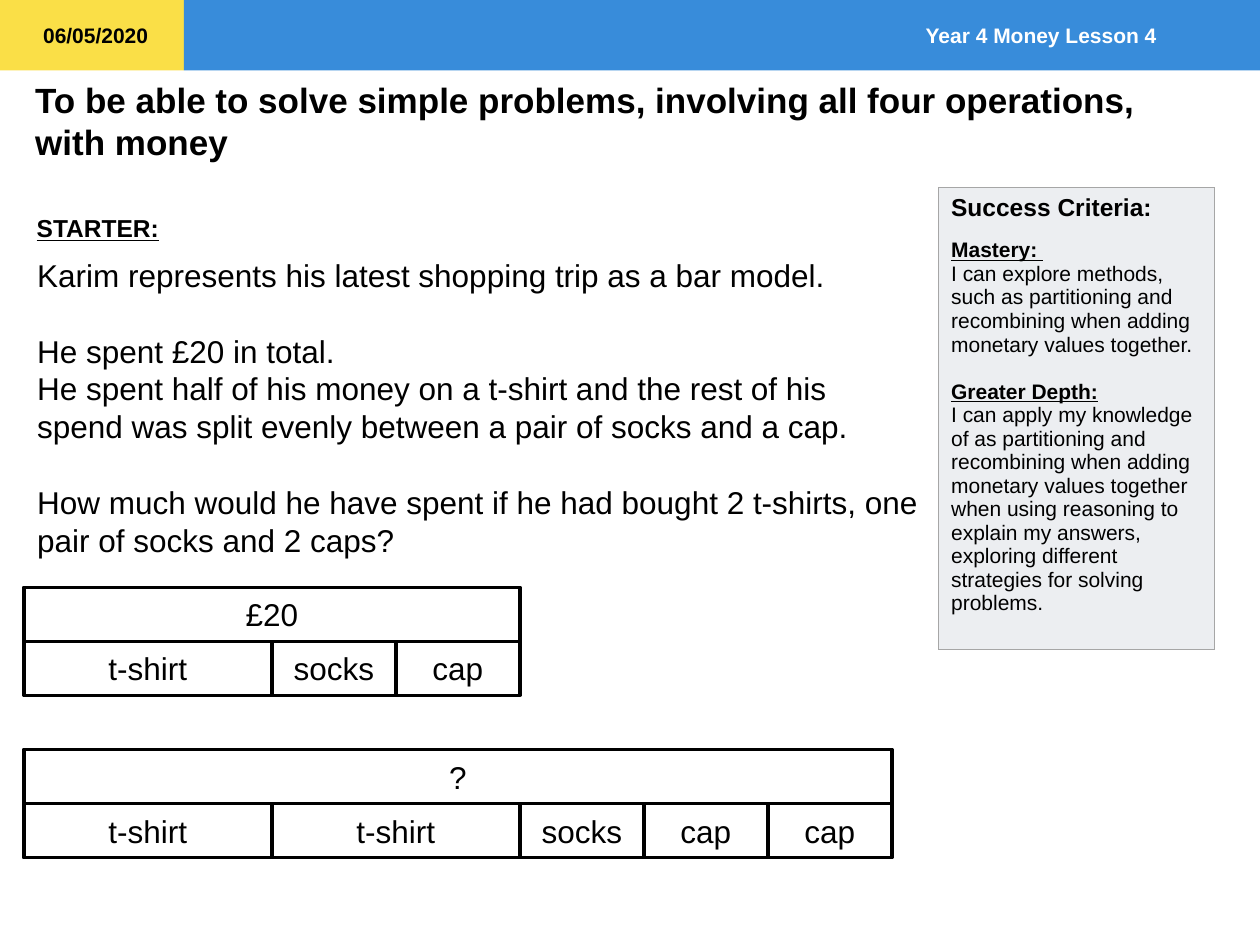
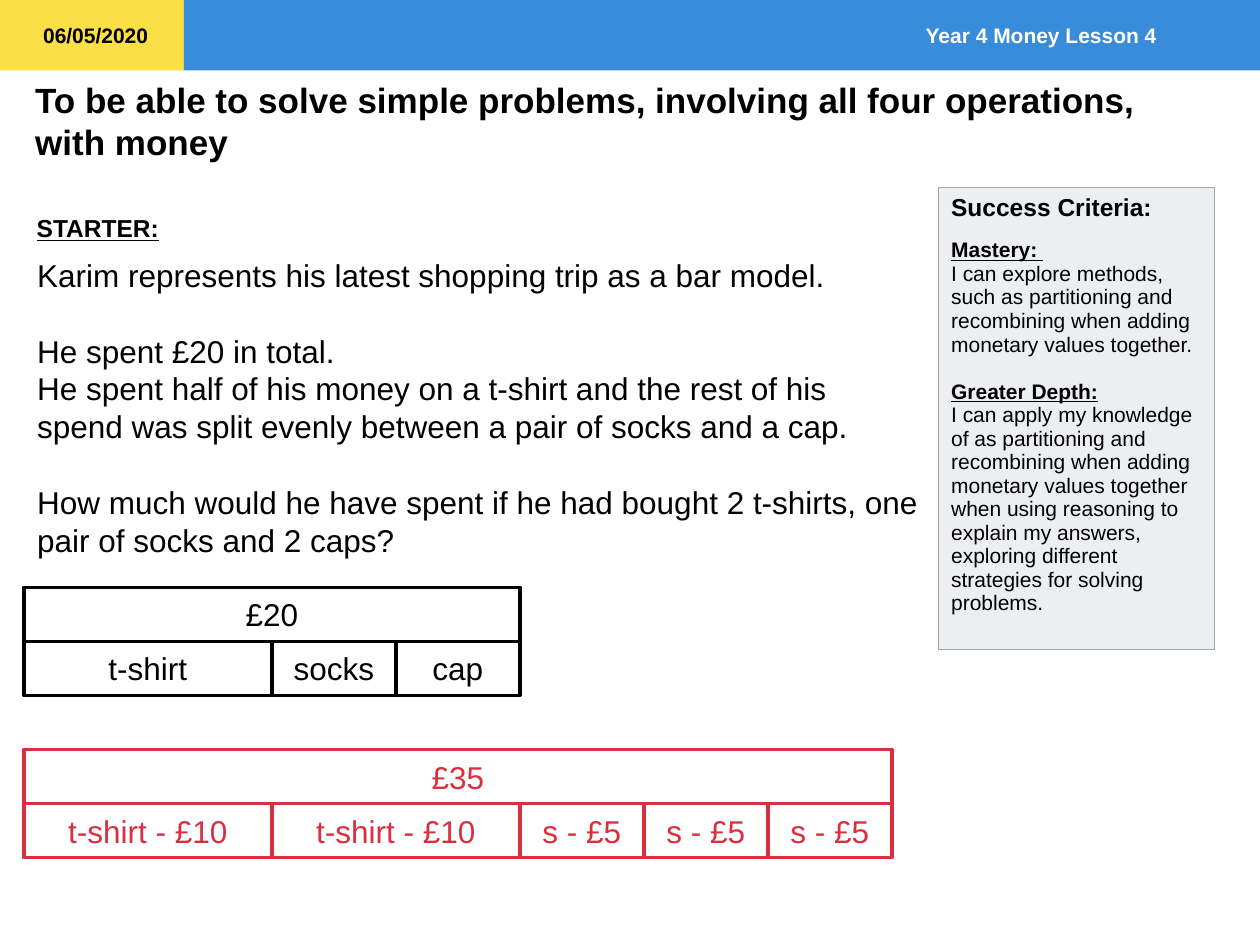
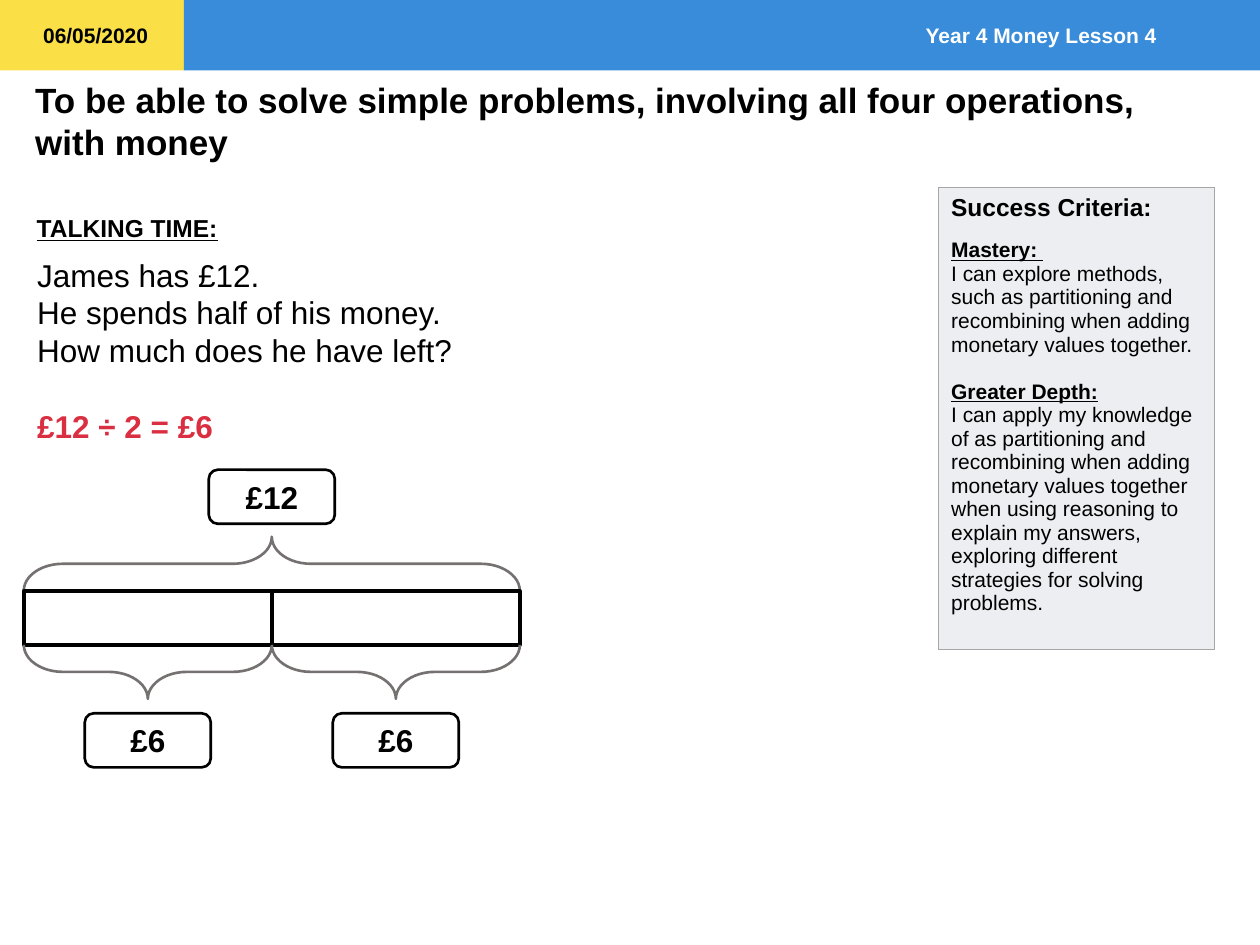
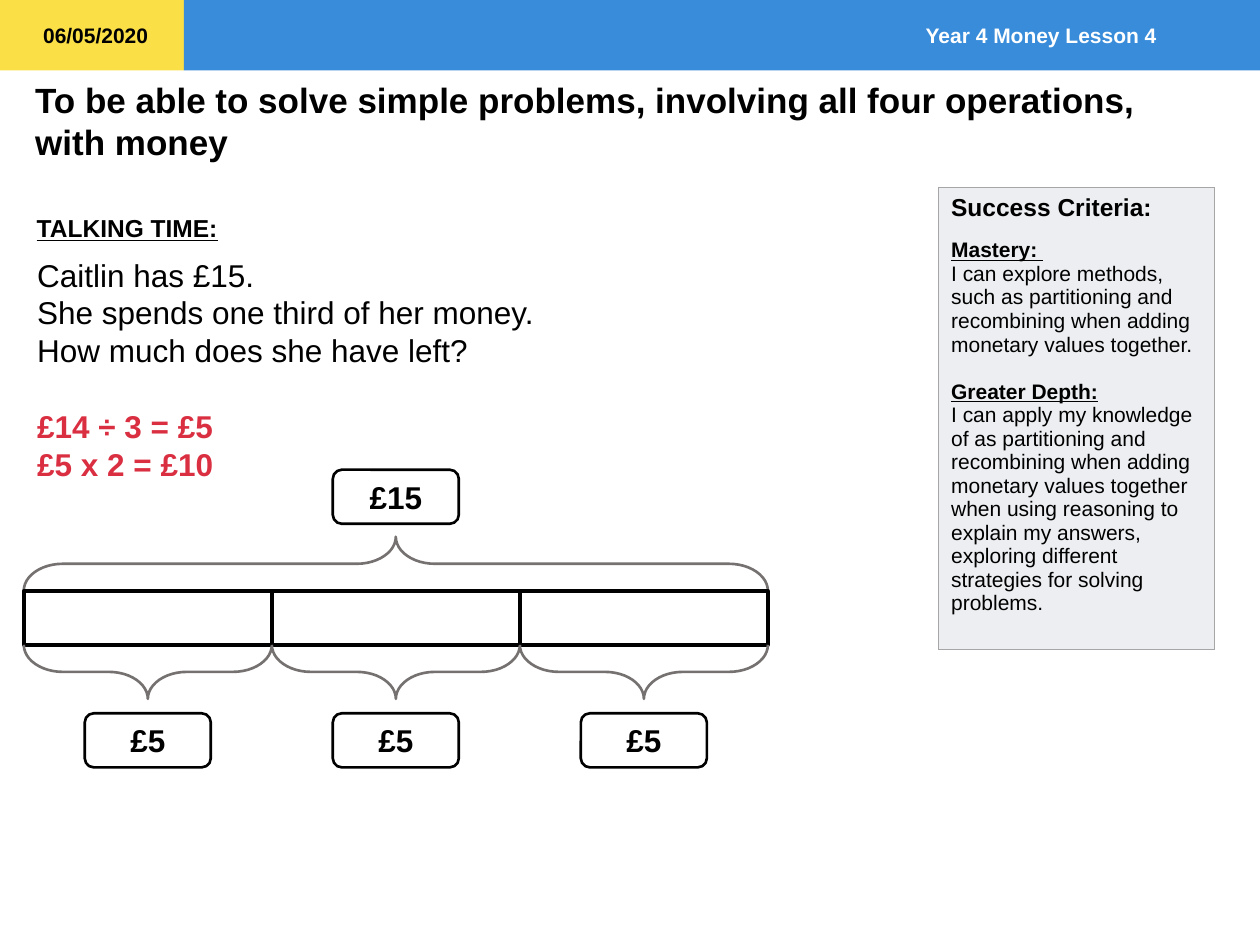
from dataclasses import dataclass

from lxml import etree
from pptx import Presentation
from pptx import util as u
from pptx.dml.color import RGBColor
from pptx.enum import shapes, text
from pptx.oxml import ns

COLORS = {
    "black": "000000",
    "white": "FFFFFF",
    "yellow": "FADF47",
    "blue": "388CDA",
    "red": "DA2E41",
    "brace": "767171",
    "panel": "ECEEF1",
    "panel_edge": "A6A6A6",
}
FONT = "Arial"
SLIDE_WIDTH, SLIDE_HEIGHT = 25.4, 19.05
BAND_HEIGHT, DATE_WIDTH = 1.42, 3.71
MODEL_LEFT, UNIT_WIDTH, BAR_HEIGHT = 0.48, 5, 1.09
SHARES_TOP, LABEL_WIDTH = 11.91, 2.54
WHOLE_LABEL_TOP, SHARE_LABEL_TOP = 9.47, 14.38
BLANK_LINE = 21.75


@dataclass(frozen=True)
class Box:
    left: float
    top: float
    width: float
    height: float

    def lengths(self) -> tuple:
        return tuple(u.Cm(value) for value in (self.left, self.top, self.width, self.height))


@dataclass(frozen=True)
class Line:
    text: str
    size: float = 18
    bold: bool = False
    underline: bool = False
    color: str = "black"
    before: float = 0


@dataclass(frozen=True)
class Bar:
    label: str
    units: float


@dataclass(frozen=True)
class BarModel:
    top: float
    total: str
    bars: tuple[Bar, ...]
    color: str = "black"


@dataclass(frozen=True)
class ShareModel:
    whole: str
    share: str
    count: int


@dataclass(frozen=True)
class Lesson:
    heading: str
    heading_width: float
    body_width: float
    body_height: float
    lines: tuple[Line, ...]
    models: tuple


CRITERIA = (
    Line("Success Criteria:", 14, bold=True),
    Line("Mastery: ", 12, bold=True, underline=True, before=10),
    Line("I can explore methods, such as partitioning and recombining when adding "
         "monetary values together.", 12),
    Line("Greater Depth:", 12, bold=True, underline=True, before=13.5),
    Line("I can apply my knowledge of as partitioning and recombining when adding "
         "monetary values together when using reasoning to explain my answers, "
         "exploring different strategies for solving problems.", 12),
)
SHOPPING = (
    Line("Karim represents his latest shopping trip as a bar model."),
    Line("He spent £20 in total.", before=BLANK_LINE),
    Line("He spent half of his money on a t-shirt and the rest of his spend was split "
         "evenly between a pair of socks and a cap."),
    Line("How much would he have spent if he had bought 2 t-shirts, one pair of socks "
         "and 2 caps?", before=BLANK_LINE),
)
SPENT = BarModel(11.84, "£20", (Bar("t-shirt", 1), Bar("socks", 0.5), Bar("cap", 0.5)))
QUESTION = BarModel(15.11, "?", (
    Bar("t-shirt", 1), Bar("t-shirt", 1), Bar("socks", 0.5), Bar("cap", 0.5), Bar("cap", 0.5),
))
ANSWER = BarModel(
    15.11, "£35", (Bar("t-shirt - £10", 1),) * 2 + (Bar("s - £5", 0.5),) * 3, "red"
)


def starter(second_model: BarModel) -> Lesson:
    return Lesson("STARTER:", 3, 18.31, 11.02, SHOPPING, (SPENT, second_model))


def talking_time(height: float, lines: tuple[Line, ...], model: ShareModel) -> Lesson:
    return Lesson("TALKING TIME:", 4.19, 24.89, height, lines, (model,))


LESSONS = (
    starter(QUESTION),
    starter(ANSWER),
    talking_time(4.11, (
        Line("James has £12."),
        Line("He spends half of his money.\vHow much does he have left?"),
        Line("£12 ÷ 2 = £6", bold=True, color="red", before=BLANK_LINE),
    ), ShareModel("£12", "£6", 2)),
    talking_time(4.88, (
        Line("Caitlin has £15."),
        Line("She spends one third of her money.\vHow much does she have left?"),
        Line("£14 ÷ 3 = £5", bold=True, color="red", before=BLANK_LINE),
        Line("£5 x 2 = £10", bold=True, color="red"),
    ), ShareModel("£15", "£5", 3)),
)


def rgb(name: str) -> RGBColor:
    return RGBColor.from_string(COLORS[name])


def add_text(frame, content: str, *, size: float = 18, bold: bool = False,
             underline: bool = False, color: str = "black", before: float = 0,
             align=text.PP_ALIGN.LEFT) -> None:
    paragraph = frame.add_paragraph() if frame.text else frame.paragraphs[0]
    paragraph.text = content
    paragraph.alignment = align
    paragraph.space_before = u.Pt(before)
    for run in paragraph.runs:
        run.font.name = FONT
        run.font.size = u.Pt(size)
        run.font.bold = bold
        run.font.underline = underline
        run.font.color.rgb = rgb(color)


def add_lines(frame, lines: tuple[Line, ...]) -> None:
    for line in lines:
        add_text(frame, line.text, size=line.size, bold=line.bold,
                 underline=line.underline, color=line.color, before=line.before)


def add_text_box(slide, box: Box, lines: tuple[Line, ...], wrap: bool = True) -> None:
    frame = slide.shapes.add_textbox(*box.lengths()).text_frame
    frame.word_wrap = wrap
    frame.auto_size = text.MSO_AUTO_SIZE.SHAPE_TO_FIT_TEXT
    add_lines(frame, lines)


def add_shape(slide, kind, box: Box, fill: str = "", line: str = "", weight: float = 2):
    shape = slide.shapes.add_shape(kind, *box.lengths())
    shape.shadow.inherit = False
    if fill:
        shape.fill.solid()
        shape.fill.fore_color.rgb = rgb(fill)
    else:
        shape.fill.background()
    if line:
        shape.line.color.rgb = rgb(line)
        shape.line.width = u.Pt(weight)
    else:
        shape.line.fill.background()
    shape.text_frame.vertical_anchor = text.MSO_ANCHOR.MIDDLE
    return shape


def add_bar(slide, box: Box, label: str = "", color: str = "black") -> None:
    shape = add_shape(slide, shapes.MSO_SHAPE.RECTANGLE, box, line=color)
    if label:
        add_text(shape.text_frame, label, color=color, align=text.PP_ALIGN.CENTER)


def add_amount(slide, center: float, top: float, label: str) -> None:
    box = Box(center - LABEL_WIDTH / 2, top, LABEL_WIDTH, BAR_HEIGHT)
    shape = add_shape(slide, shapes.MSO_SHAPE.ROUNDED_RECTANGLE, box, line="black", weight=1.5)
    add_text(shape.text_frame, label, bold=True, align=text.PP_ALIGN.CENTER)


def add_brace(slide, center: float, top: float, span: float, rotation: int) -> None:
    box = Box(center - BAR_HEIGHT / 2, top + (BAR_HEIGHT - span) / 2, BAR_HEIGHT, span)
    brace = add_shape(slide, shapes.MSO_SHAPE.RIGHT_BRACE, box, line="brace", weight=1.5)
    brace.adjustments[0] = 0.722
    brace.adjustments[1] = 0.5
    brace.rotation = rotation


def add_bar_model(slide, model: BarModel) -> None:
    total_width = UNIT_WIDTH * sum(bar.units for bar in model.bars)
    add_bar(slide, Box(MODEL_LEFT, model.top, total_width, BAR_HEIGHT), model.total, model.color)
    left = MODEL_LEFT
    for bar in model.bars:
        width = bar.units * UNIT_WIDTH
        add_bar(slide, Box(left, model.top + BAR_HEIGHT, width, BAR_HEIGHT), bar.label, model.color)
        left += width


def add_share_model(slide, model: ShareModel) -> None:
    span = model.count * UNIT_WIDTH
    middle = MODEL_LEFT + span / 2
    add_brace(slide, middle, SHARES_TOP - BAR_HEIGHT, span, 270)
    add_amount(slide, middle, WHOLE_LABEL_TOP, model.whole)
    for index in range(model.count):
        left = MODEL_LEFT + index * UNIT_WIDTH
        center = left + UNIT_WIDTH / 2
        add_bar(slide, Box(left, SHARES_TOP, UNIT_WIDTH, BAR_HEIGHT))
        add_brace(slide, center, SHARES_TOP + BAR_HEIGHT, UNIT_WIDTH, 90)
        add_amount(slide, center, SHARE_LABEL_TOP, model.share)


def add_borders(cell, color: str, weight: float) -> None:
    properties = cell._tc.get_or_add_tcPr()
    for index, side in enumerate(("lnL", "lnR", "lnT", "lnB")):
        border = etree.Element(ns.qn(f"a:{side}"), w=str(u.Pt(weight)))
        fill = etree.SubElement(border, ns.qn("a:solidFill"))
        etree.SubElement(fill, ns.qn("a:srgbClr"), val=COLORS[color])
        properties.insert(index, border)


def add_criteria(slide) -> None:
    table = slide.shapes.add_table(1, 1, *Box(18.92, 3.78, 5.57, 9.32).lengths()).table
    table.first_row = False
    table.horz_banding = False
    cell = table.cell(0, 0)
    cell.fill.solid()
    cell.fill.fore_color.rgb = rgb("panel")
    add_borders(cell, "panel_edge", 0.5)
    add_lines(cell.text_frame, CRITERIA)


def add_frame(slide) -> None:
    rectangle = shapes.MSO_SHAPE.RECTANGLE
    add_shape(slide, rectangle, Box(0, 0, DATE_WIDTH, BAND_HEIGHT), fill="yellow")
    band_box = Box(DATE_WIDTH, 0, SLIDE_WIDTH - DATE_WIDTH, BAND_HEIGHT)
    band = add_shape(slide, rectangle, band_box, fill="blue")
    band.text_frame.margin_right = u.Cm(2.08)
    add_text(band.text_frame, "Year 4 Money Lesson 4", size=12, bold=True, color="white",
             align=text.PP_ALIGN.RIGHT)
    title = "To be able to solve simple problems, involving all four operations,\vwith money"
    add_text_box(slide, Box(0.46, 1.45, 24.82, 1.96), (Line(title, 20, bold=True),))
    add_criteria(slide)
    add_text_box(slide, Box(0.62, 0.33, 2.64, 0.76), (Line("06/05/2020", 12, bold=True),),
                 wrap=False)


def add_lesson(slide, lesson: Lesson) -> None:
    add_frame(slide)
    add_text_box(slide, Box(0.5, 5.03, lesson.body_width, lesson.body_height), lesson.lines)
    heading = Line(lesson.heading, 14, bold=True, underline=True)
    add_text_box(slide, Box(0.49, 4.17, lesson.heading_width, 0.86), (heading,), wrap=False)
    for model in lesson.models:
        if isinstance(model, BarModel):
            add_bar_model(slide, model)
        else:
            add_share_model(slide, model)


def main() -> None:
    presentation = Presentation()
    presentation.slide_width = u.Cm(SLIDE_WIDTH)
    presentation.slide_height = u.Cm(SLIDE_HEIGHT)
    for lesson in LESSONS:
        add_lesson(presentation.slides.add_slide(presentation.slide_layouts[6]), lesson)
    presentation.save("out.pptx")


if __name__ == "__main__":
    main()
